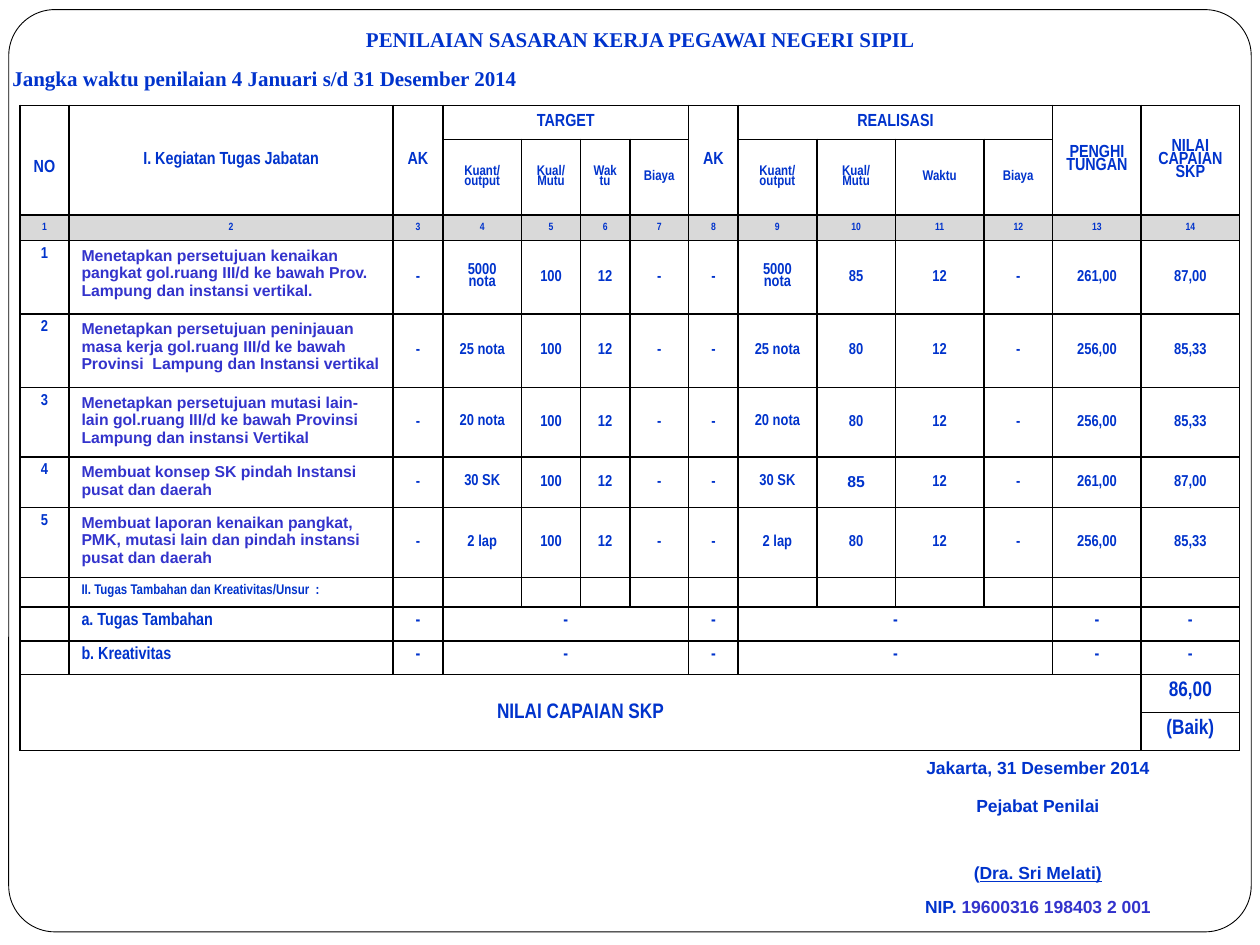
from lxml.etree import SubElement
from pptx import Presentation
from pptx.dml.color import RGBColor
from pptx.enum.shapes import MSO_SHAPE
from pptx.enum.text import MSO_ANCHOR, PP_ALIGN
from pptx.oxml.ns import qn
from pptx.util import Pt

BLUE, VIOLET, BLACK, GRAY, WHITE = "0033CC", "3333CC", "000000", "D9D9D9", "FFFFFF"
NO_STYLE = "{2D5ABB26-0587-4C30-8999-92F81FD0307C}"


def color(value):
    return RGBColor.from_string(value)


def write(frame, text, size, name="Arial Narrow", tint=BLUE, align=PP_ALIGN.CENTER, spacing=None):
    frame.text = text
    for paragraph in frame.paragraphs:
        paragraph.alignment = align
        paragraph.line_spacing = spacing
        paragraph.font.size = Pt(size)
        paragraph.font.name = name
        paragraph.font.bold = True
        paragraph.font.color.rgb = color(tint)


presentation = Presentation()
presentation.slide_width, presentation.slide_height = Pt(720), Pt(540)
slide = presentation.slides.add_slide(presentation.slide_layouts[5])

frame_shape = slide.shapes.add_shape(MSO_SHAPE.ROUNDED_RECTANGLE, Pt(5), Pt(5.5), Pt(710), Pt(527))
frame_shape.adjustments[0] = 0.05
frame_shape.shadow.inherit = False
frame_shape.fill.solid()
frame_shape.fill.fore_color.rgb = color(WHITE)
frame_shape.line.color.rgb = color(BLACK)
frame_shape.line.width = Pt(0.5)
slide.shapes._spTree.insert(2, frame_shape._element)

title = slide.shapes.title
title.left, title.top, title.width, title.height = Pt(186), Pt(11.5), Pt(360), Pt(21.6)
title.text_frame.vertical_anchor = MSO_ANCHOR.MIDDLE
write(title.text_frame, "PENILAIAN SASARAN KERJA PEGAWAI NEGERI SIPIL", 12, "Times New Roman")

period = slide.shapes.add_textbox(Pt(0), Pt(34), Pt(345), Pt(21.6))
period.text_frame.word_wrap = True
write(period.text_frame, "Jangka waktu penilaian 4 Januari s/d 31 Desember 2014", 12,
      "Times New Roman", align=PP_ALIGN.LEFT)

measures = ["Kuant/ output", "Kual/ Mutu", "Waktu", "Biaya"]
tasks = [
    ("Menetapkan persetujuan kenaikan pangkat gol.ruang III/d ke bawah Prov. Lampung dan instansi vertikal.",
     "5000 nota", "85", "261,00", "87,00"),
    ("Menetapkan persetujuan peninjauan masa kerja gol.ruang III/d ke bawah Provinsi  Lampung dan Instansi vertikal",
     "25 nota", "80", "256,00", "85,33"),
    ("Menetapkan persetujuan mutasi lain-lain gol.ruang III/d ke bawah Provinsi Lampung dan instansi Vertikal",
     "20 nota", "80", "256,00", "85,33"),
    ("Membuat konsep SK pindah Instansi pusat dan daerah",
     "30 SK", "85", "261,00", "87,00"),
    ("Membuat laporan kenaikan pangkat, PMK, mutasi lain dan pindah instansi pusat dan daerah",
     "2 lap", "80", "256,00", "85,33"),
]
rows = [
    ["NO", "I. Kegiatan Tugas Jabatan", "AK", "TARGET", "", "", "", "AK", "REALISASI", "", "", "",
     "PENGHITUNGAN", "NILAI\nCAPAIAN\nSKP"],
    ["", "", ""] + measures + [""] + measures + ["", ""],
    [str(number) for number in range(1, 15)],
]
for number, (task, output, quality, total, score) in enumerate(tasks, 1):
    rows.append([str(number), task, "-", output, "100", "12", "-",
                 "-", output, quality, "12", "-", total, score])
rows.append(["", "II. Tugas Tambahan dan Kreativitas/Unsur  :"] + [""] * 12)
for extra in ("a. Tugas Tambahan", "b. Kreativitas"):
    rows.append(["", extra, "-", "-", "", "", "", "-", "-", "", "", "", "-", "-"])
rows.append(["NILAI CAPAIAN SKP"] + [""] * 12 + ["86,00"])
rows.append([""] * 13 + ["(Baik)"])

widths = [28, 185.2, 28.5, 45, 33.7, 28.2, 33.7, 28.2, 45, 45, 50.5, 39.4, 50.5, 56.3]
heights = [19.4, 43.4, 14.3, 42, 42, 39.6, 28.6, 40, 16.6, 19.4, 19.4, 21.7, 21.7]
sizes = [10, 8, 6, 9, 9, 9, 9, 9, 8, 10, 10, 12, 12]

table = slide.shapes.add_table(13, 14, Pt(11.4), Pt(60.2), Pt(sum(widths)), Pt(sum(heights))).table
table._tbl.tblPr[0].text = NO_STYLE
table.first_row = table.horz_banding = False
for column, width in zip(table.columns, widths):
    column.width = Pt(width)
for row, height in zip(table.rows, heights):
    row.height = Pt(height)

for r, texts in enumerate(rows):
    for c, text in enumerate(texts):
        cell = table.cell(r, c)
        properties = cell._tc.get_or_add_tcPr()
        for side in ("lnL", "lnR", "lnT", "lnB"):
            line = SubElement(properties, qn(f"a:{side}"), w=str(Pt(1)))
            SubElement(SubElement(line, qn("a:solidFill")), qn("a:srgbClr"), val=BLACK)
        if r == 2:
            cell.fill.solid()
            cell.fill.fore_color.rgb = color(GRAY)
        else:
            cell.fill.background()
        is_task = 3 <= r <= 7
        top_aligned = 8 <= r <= 10 or c == 13 and r > 10 or is_task and c < 2
        cell.vertical_anchor = MSO_ANCHOR.TOP if top_aligned else MSO_ANCHOR.MIDDLE
        arial = is_task and (c == 1 or (r, c) == (6, 9))
        write(cell.text_frame, text, sizes[r],
              "Arial" if arial else "Arial Narrow",
              VIOLET if is_task and c == 1 else BLUE,
              PP_ALIGN.LEFT if c == 1 and r > 2 else PP_ALIGN.CENTER,
              0.8 if r < 2 or is_task and c in (3, 8) else None)

table.cell(0, 0).margin_top = Pt(13)
for c in (0, 1, 2, 7, 12, 13):
    table.cell(0, c).merge(table.cell(1, c))
for r in (0, 9, 10):
    for c in (3, 8):
        table.cell(r, c).merge(table.cell(r, c + 3))
table.cell(11, 0).merge(table.cell(12, 12))

signature_lines = ["Jakarta, 31 Desember 2014", "Pejabat Penilai", "", "", ""]
signature_heights = [21.6, 19.2, 19.2, 19.4, 19.4]
signature = slide.shapes.add_table(5, 2, Pt(242), Pt(430), Pt(450), Pt(sum(signature_heights))).table
signature._tbl.tblPr[0].text = NO_STYLE
signature.first_row = signature.horz_banding = False
signature.columns[0].width, signature.columns[1].width = Pt(252), Pt(198)
for r, (text, height) in enumerate(zip(signature_lines, signature_heights)):
    signature.rows[r].height = Pt(height)
    for c, content in enumerate(("", text)):
        write(signature.cell(r, c).text_frame, content, 10, "Arial")

name_paragraph = signature.cell(3, 1).text_frame.paragraphs[0]
name_paragraph.add_run().text = "("
name_run = name_paragraph.add_run()
name_run.text = "Dra. Sri Melati)"
name_run.font.underline = True

number_paragraph = signature.cell(4, 1).text_frame.paragraphs[0]
number_paragraph.add_run().text = "NIP. "
number_run = number_paragraph.add_run()
number_run.text = "19600316 198403 2 001"
number_run.font.color.rgb = color(VIOLET)

presentation.save("out.pptx")
